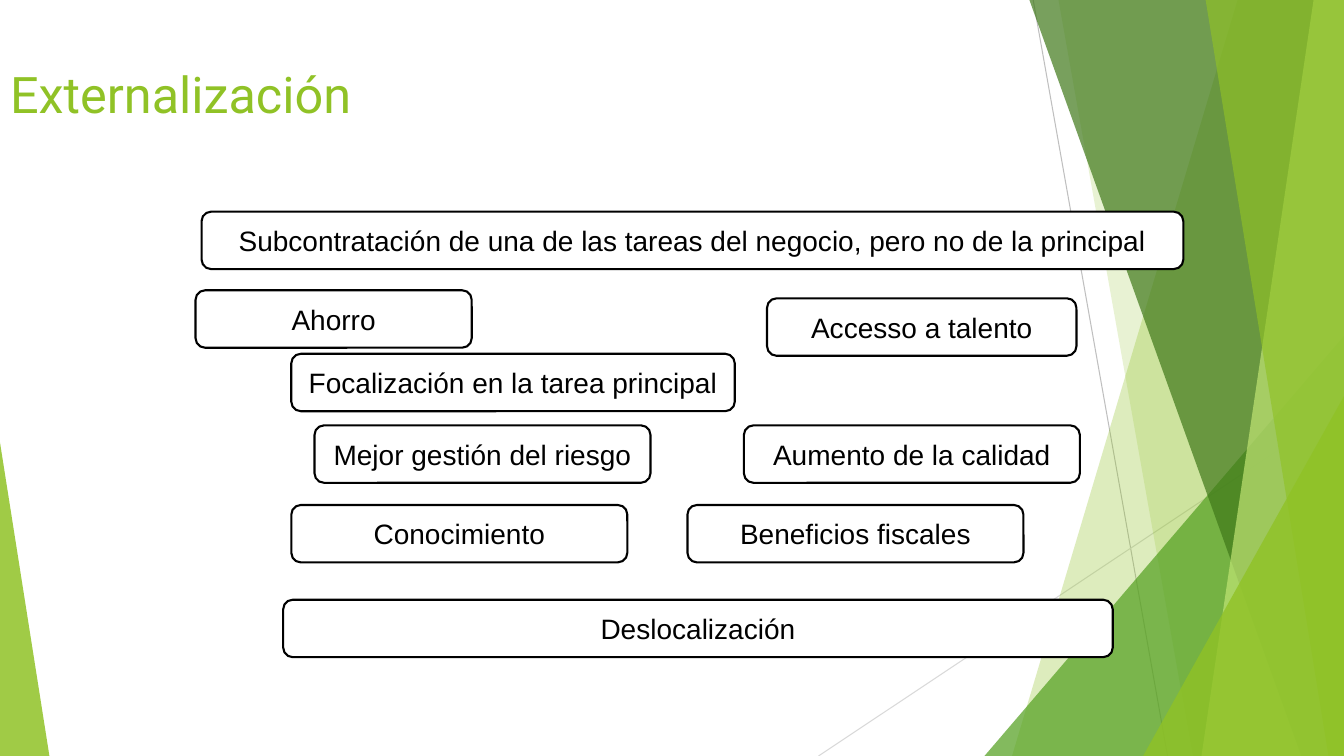
import pptx
import pptx.util
import pptx.dml.color
import pptx.enum.shapes
import pptx.enum.text
import pptx.oxml
import pptx.oxml.ns

SHAPES = pptx.enum.shapes.MSO_SHAPE
ALIGN = pptx.enum.text.PP_ALIGN
COLORS = {
    "lime": "90C226", "green": "54A021", "forest": "3F7819", "pale": "C0E474",
    "silver": "BFBFBF", "mist": "D9D9D9", "white": "FFFFFF", "black": "000000",
}
COLUMNS, ROWS = 40, 30
TOP_BLEED = -0.03
BOX_ROWS = 2.28


def rgb(color):
    return pptx.dml.color.RGBColor.from_string(COLORS[color])


class SlideBuilder:
    def __init__(self, deck):
        self.column = deck.slide_width / COLUMNS
        self.row = deck.slide_height / ROWS
        self.slide = deck.slides.add_slide(deck.slide_layouts[5])
        self.shapes = self.slide.shapes

    def x(self, columns):
        return round(columns * self.column)

    def y(self, rows):
        return round(rows * self.row)

    def frame(self, left, top, width, height):
        return self.x(left), self.y(top), self.x(width), self.y(height)

    def label(self, text_frame, text, font, size, color, alignment):
        text_frame.word_wrap = True
        text_frame.vertical_anchor = pptx.enum.text.MSO_ANCHOR.MIDDLE
        paragraph = text_frame.paragraphs[0]
        paragraph.alignment = alignment
        run = paragraph.add_run()
        run.text = text
        run.font.name = font
        run.font.size = pptx.util.Pt(size)
        run.font.color.rgb = rgb(color)

    def paint(self, facet, color, opacity):
        facet.shadow.inherit = False
        facet.fill.solid()
        facet.fill.fore_color.rgb = rgb(color)
        facet.line.fill.background()
        solid = facet._element.spPr.find(pptx.oxml.ns.qn("a:solidFill"))
        alpha = pptx.oxml.parse_xml(
            f'<a:alpha {pptx.oxml.ns.nsdecls("a")} val="{opacity * 1000}"/>')
        solid[0].append(alpha)

    def ray(self, start, end, color):
        line = self.shapes.add_connector(
            pptx.enum.shapes.MSO_CONNECTOR.STRAIGHT,
            self.x(start[0]), self.y(start[1]), self.x(end[0]), self.y(end[1]))
        line.line.color.rgb = rgb(color)
        line.line.width = pptx.util.Pt(0.75)
        line._element.spPr.append(pptx.oxml.parse_xml(
            f'<a:effectLst {pptx.oxml.ns.nsdecls("a")}/>'))

    def band(self, top_left, bottom_left, color, opacity):
        outline = self.shapes.build_freeform(self.x(top_left), self.y(TOP_BLEED))
        corners = [(COLUMNS, TOP_BLEED), (COLUMNS, ROWS), (bottom_left, ROWS)]
        outline.add_line_segments([(self.x(c), self.y(r)) for c, r in corners])
        self.paint(outline.convert_to_shape(), color, opacity)

    def corner(self, left, right, top, apex, color, opacity):
        triangle = self.shapes.add_shape(
            SHAPES.ISOSCELES_TRIANGLE,
            *self.frame(left, top, right - left, ROWS - top))
        triangle.adjustments[0] = apex
        self.paint(triangle, color, opacity)

    def title(self, text, left, top, width, height):
        heading = self.shapes.title
        heading.left, heading.top, heading.width, heading.height = self.frame(
            left, top, width, height)
        heading.text_frame.auto_size = pptx.enum.text.MSO_AUTO_SIZE.NONE
        self.label(heading.text_frame, text, "Roboto", 36, "lime", ALIGN.LEFT)
        self.shapes._spTree.append(heading._element)

    def box(self, text, left, top, width):
        card = self.shapes.add_shape(
            SHAPES.FLOWCHART_ALTERNATE_PROCESS,
            *self.frame(left, top, width, BOX_ROWS))
        card.shadow.inherit = False
        card.fill.solid()
        card.fill.fore_color.rgb = rgb("white")
        card.line.color.rgb = rgb("black")
        card.line.width = pptx.util.Pt(1.5)
        self.label(card.text_frame, text, "Arial", 20, "black", ALIGN.CENTER)


def main():
    deck = pptx.Presentation()
    deck.slide_width = pptx.util.Inches(40 / 3)
    deck.slide_height = pptx.util.Inches(7.5)
    builder = SlideBuilder(deck)

    builder.ray((30.75, 0), (34.75, ROWS), "silver")
    builder.ray((COLUMNS, 16.12), (24.36, ROWS), "mist")
    builder.band(36.84, 30.12, "lime", 30)
    builder.band(31.5, 35.5, "lime", 20)
    builder.corner(29.3, COLUMNS, 13.33, 1, "green", 72)
    builder.band(30.63, 38.73, "forest", 70)
    builder.band(39.1, 35.76, "pale", 70)
    builder.band(35.88, 39.54, "lime", 65)
    builder.corner(34.02, COLUMNS, 15.72, 1, "lime", 80)
    builder.corner(0, 1.47, 17.56, 0, "lime", 85)

    builder.title("Externalización", 0, 1.2, 31.65, 5)

    benefits = [
        ("Subcontratación de una de las tareas del negocio, pero no de la principal",
         6, 8.4, 29.22),
        ("Ahorro", 5.82, 11.52, 8.22),
        ("Focalización en la tarea principal", 8.67, 14.04, 13.2),
        ("Accesso a talento", 22.83, 11.84, 9.21),
        ("Mejor gestión del riesgo", 9.36, 16.88, 10),
        ("Aumento de la calidad", 22.14, 16.88, 10),
        ("Conocimiento", 8.67, 20.04, 10),
        ("Beneficios fiscales", 20.46, 20.04, 10),
        ("Deslocalización", 8.43, 23.8, 24.69),
    ]
    for benefit in benefits:
        builder.box(*benefit)

    deck.save("out.pptx")


if __name__ == "__main__":
    main()
